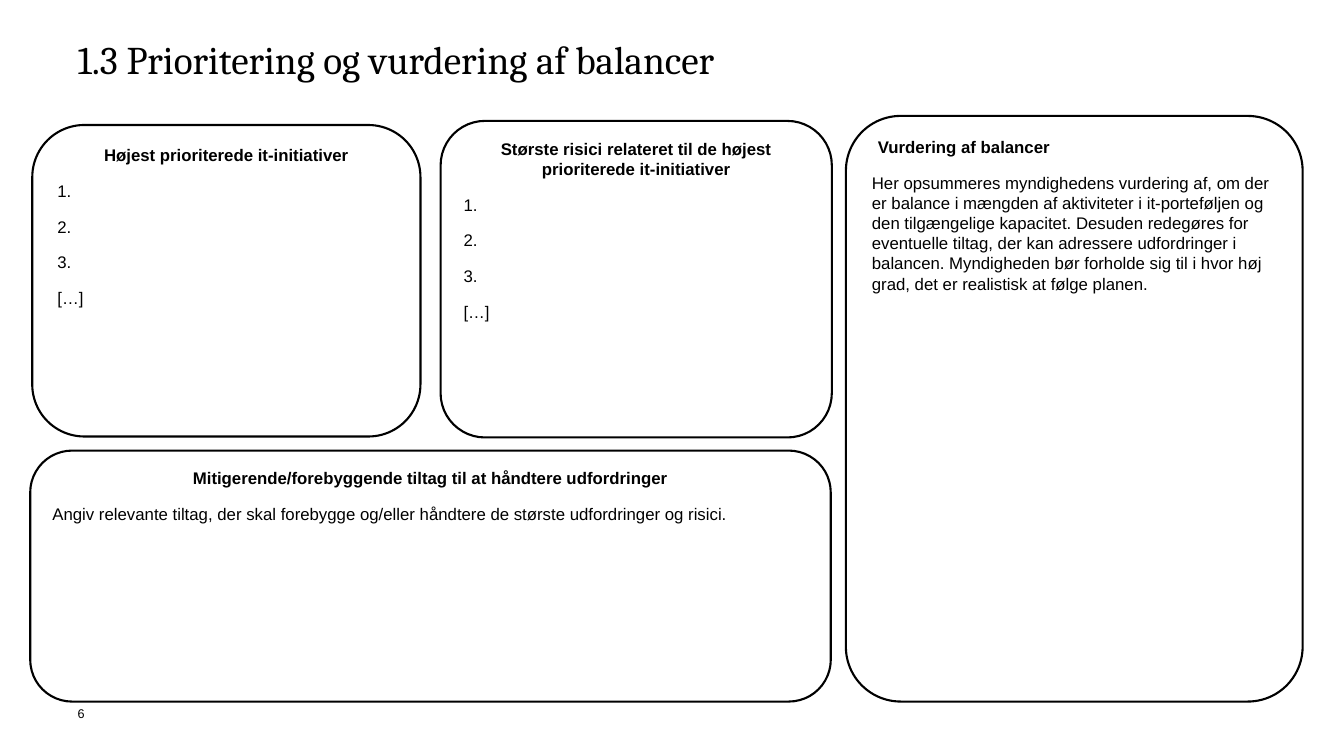
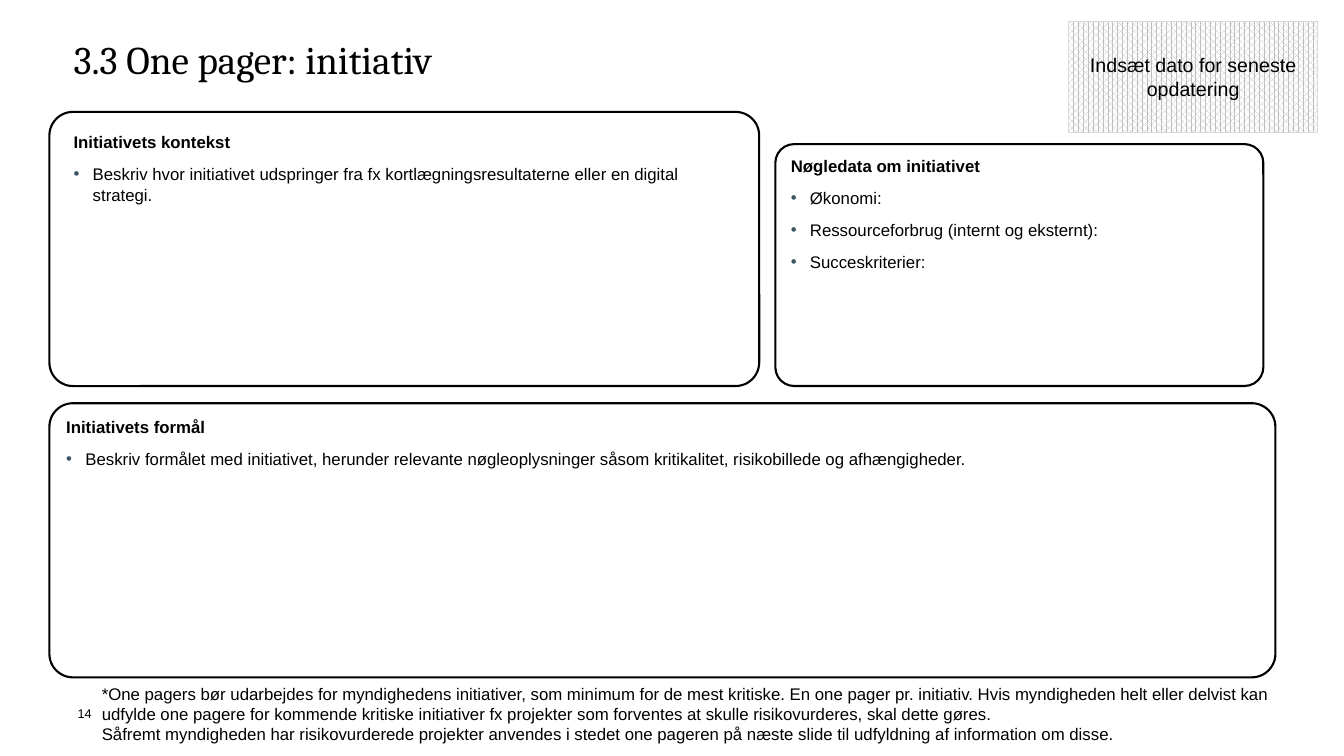
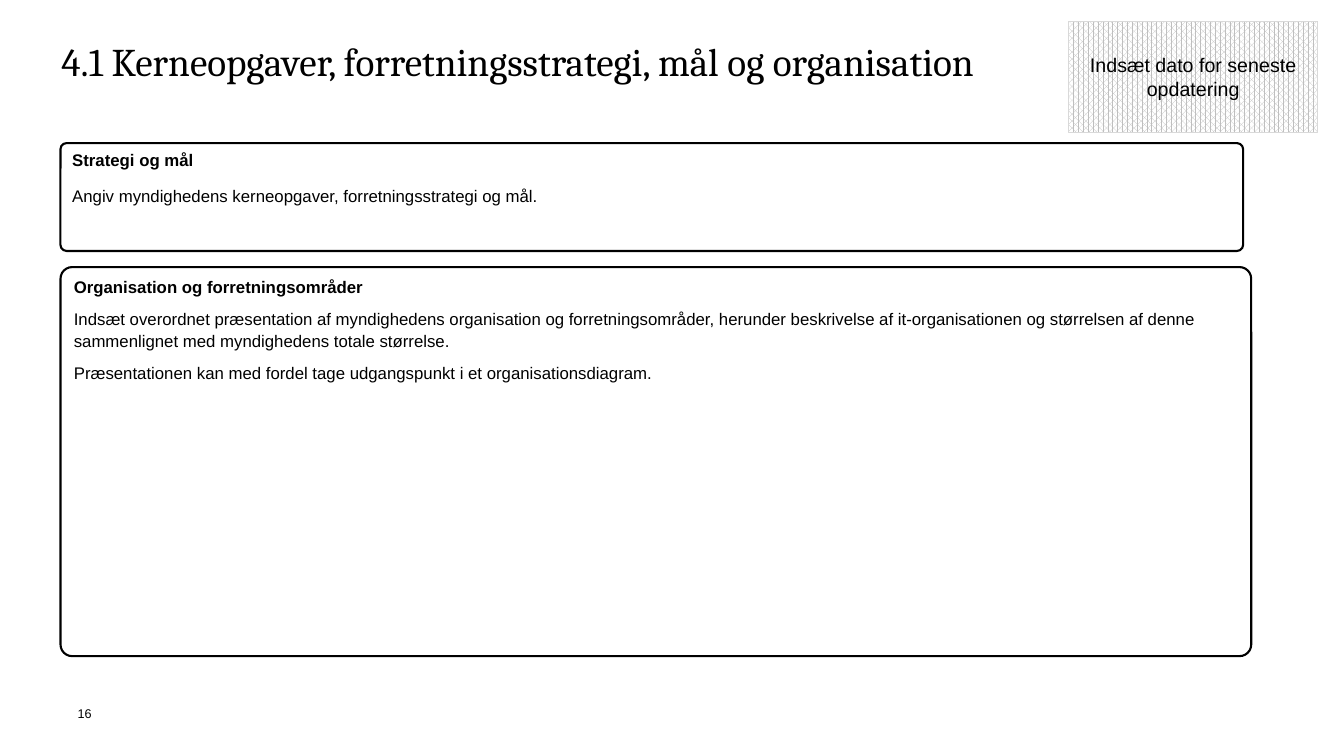
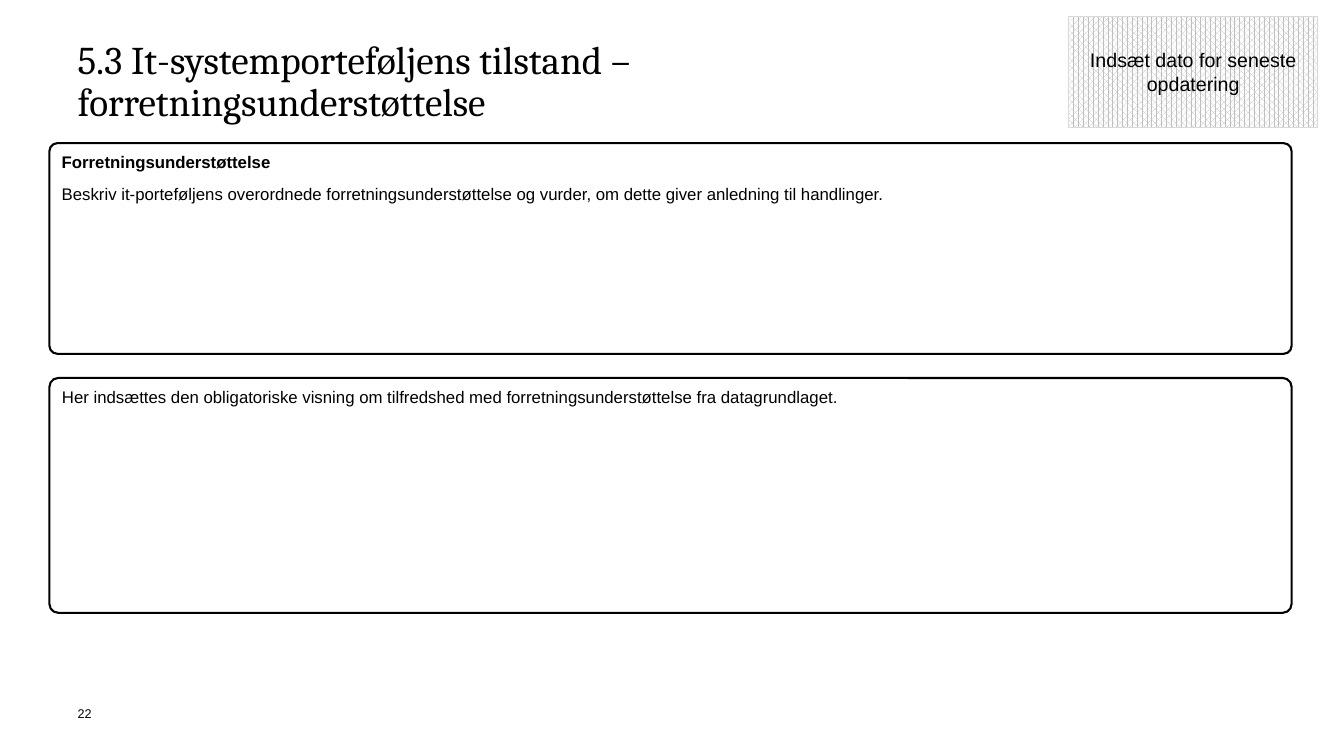
from dataclasses import dataclass

from lxml import etree
from pptx import Presentation
from pptx.dml.color import RGBColor
from pptx.enum.dml import MSO_PATTERN
from pptx.enum.shapes import MSO_SHAPE
from pptx.enum.text import MSO_ANCHOR, MSO_AUTO_SIZE, PP_ALIGN
from pptx.oxml.ns import qn
from pptx.util import Pt

PX = 9144
ROUNDED = MSO_SHAPE.ROUNDED_RECTANGLE
RECTANGLE = MSO_SHAPE.RECTANGLE
TOP, MIDDLE = MSO_ANCHOR.TOP, MSO_ANCHOR.MIDDLE
LEFT, CENTER = PP_ALIGN.LEFT, PP_ALIGN.CENTER
NO_AUTOFIT = MSO_AUTO_SIZE.NONE
HATCH = MSO_PATTERN.PERCENT_70


@dataclass(frozen=True)
class Theme:
    ink: RGBColor = RGBColor.from_string("000000")
    paper: RGBColor = RGBColor.from_string("FFFFFF")
    hatch: RGBColor = RGBColor.from_string("BFBFBF")
    stamp_line: RGBColor = RGBColor.from_string("D9D9D9")
    bullet: str = "3B5463"
    title_font: str = "Cambria"
    body_font: str = "Arial"
    title_size: int = 28
    stamp_size: int = 14
    body_size: int = 12
    number_size: int = 9
    panel_line: float = 1.5
    bullet_indent: int = 19
    heading_indent: int = 6


THEME = Theme()
LOOSE = (1.0, 11)
TIGHT = (1.08, 7.2)
STAMP_TEXT = "Indsæt dato for seneste opdatering"

SLIDES = [
    {
        "number": "6",
        "title": "1.3 Prioritering og vurdering af balancer",
        "title_at": (77, 40, 1180, 102),
        "panels": [
            ((32, 124, 385, 309), 0.167, LOOSE, [
                ("centered heading", "Højest prioriterede it-initiativer"),
                ("body", "1."),
                ("body", "2."),
                ("body", "3."),
                ("body", "[…]"),
            ]),
            ((437, 120, 388, 314), 0.14, LOOSE, [
                ("centered heading", "Største risici relateret til de højest prioriterede it-initiativer"),
                ("body", "1."),
                ("body", "2."),
                ("body", "3."),
                ("body", "[…]"),
            ]),
            ((30, 447, 794, 249), 0.167, LOOSE, [
                ("centered heading", "Mitigerende/forebyggende tiltag til at håndtere udfordringer"),
                ("body", "Angiv relevante tiltag, der skal forebygge og/eller håndtere de største udfordringer og risici."),
            ]),
            ((839, 115, 453, 581), 0.12, LOOSE, [
                ("indented heading", "Vurdering af balancer"),
                ("body", "Her opsummeres myndighedens vurdering af, om der er balance i mængden af aktiviteter i "
                         "it-porteføljen og den tilgængelige kapacitet. Desuden redegøres for eventuelle tiltag, der kan "
                         "adressere udfordringer i balancen. Myndigheden bør forholde sig til i hvor høj grad, det er "
                         "realistisk at følge planen."),
            ]),
        ],
    },
    {
        "number": "14",
        "title": "3.3 One pager: initiativ",
        "title_at": (73, 40, 1180, 102),
        "stamp_top": 21,
        "panels": [
            ((49, 111, 704, 272), 0.086, TIGHT, []),
            ((769, 143, 484, 240), 0.078, TIGHT, [
                ("heading", "Nøgledata om initiativet"),
                ("bullet", "Økonomi:"),
                ("bullet", "Ressourceforbrug (internt og eksternt):"),
                ("bullet", "Succeskriterier:"),
            ]),
            ((49, 400, 1216, 272), 0.086, TIGHT, [
                ("heading", "Initiativets formål"),
                ("bullet", "Beskriv formålet med initiativet, herunder relevante nøgleoplysninger såsom kritikalitet, "
                           "risikobillede og afhængigheder."),
            ]),
            ((101, 678, 1180, 61), None, LOOSE, [
                ("body", "*One pagers bør udarbejdes for myndighedens initiativer, som minimum for de mest kritiske. "
                         "En one pager pr. initiativ. Hvis myndigheden helt eller delvist kan udfylde one pagere for "
                         "kommende kritiske initiativer fx projekter som forventes at skulle risikovurderes, skal dette "
                         "gøres.\nSåfremt myndigheden har risikovurderede projekter anvendes i stedet one pageren på "
                         "næste slide til udfyldning af information om disse."),
            ]),
            ((73, 129, 633, 76), None, TIGHT, [
                ("heading", "Initiativets kontekst"),
                ("bullet", "Beskriv hvor initiativet udspringer fra fx kortlægningsresultaterne eller en digital strategi."),
            ]),
        ],
    },
    {
        "number": "16",
        "title": "4.1 Kerneopgaver, forretningsstrategi, mål og organisation",
        "title_at": (61, 40, 1196, 102),
        "title_spacing": 0.96,
        "stamp_top": 21,
        "panels": [
            ((60, 142, 1173, 107), 0.057, LOOSE, [
                ("heading", "Strategi og mål"),
                ("body", "Angiv myndighedens kerneopgaver, forretningsstrategi og mål."),
            ]),
            ((60, 265, 1181, 386), 0.03, TIGHT, [
                ("heading", "Organisation og forretningsområder"),
                ("body", "Indsæt overordnet præsentation af myndighedens organisation og forretningsområder, herunder "
                         "beskrivelse af it-organisationen og størrelsen af denne sammenlignet med myndighedens totale "
                         "størrelse."),
                ("body", "Præsentationen kan med fordel tage udgangspunkt i et organisationsdiagram."),
            ]),
        ],
    },
    {
        "number": "22",
        "title": "5.3 It-systemporteføljens tilstand –\nforretningsunderstøttelse",
        "title_at": (77, 40, 1180, 102),
        "stamp_top": 16,
        "panels": [
            ((49, 142, 1232, 209), 0.038, TIGHT, [
                ("heading", "Forretningsunderstøttelse"),
                ("body", "Beskriv it-porteføljens overordnede forretningsunderstøttelse og vurder, om dette giver "
                         "anledning til handlinger."),
            ]),
            ((49, 375, 1232, 233), 0.038, TIGHT, [
                ("body", "Her indsættes den obligatoriske visning om tilfredshed med forretningsunderstøttelse fra "
                         "datagrundlaget."),
            ]),
        ],
    },
]


def prepare_frame(shape, anchor=TOP, inset=(0, 0)):
    frame = shape.text_frame
    frame.word_wrap = True
    frame.auto_size = NO_AUTOFIT
    frame.vertical_anchor = anchor
    frame.margin_left = frame.margin_right = inset[0] * PX
    frame.margin_top = frame.margin_bottom = inset[1] * PX
    return frame


def write_paragraphs(frame, items, spacing=LOOSE, size=THEME.body_size, name=THEME.body_font):
    line_spacing, space_before = spacing
    for index, (kind, text) in enumerate(items):
        para = frame.add_paragraph() if index else frame.paragraphs[0]
        para.text = text
        properties = para._p.get_or_add_pPr()
        if kind == "bullet":
            properties.set("marL", str(THEME.bullet_indent * PX))
            properties.set("indent", str(-THEME.bullet_indent * PX))
            bullet_color = etree.SubElement(properties, qn("a:buClr"))
            etree.SubElement(bullet_color, qn("a:srgbClr"), val=THEME.bullet)
            etree.SubElement(properties, qn("a:buFont"), typeface=THEME.body_font)
            etree.SubElement(properties, qn("a:buChar"), char="•")
        elif kind == "indented heading":
            properties.set("marL", str(THEME.heading_indent * PX))
        para.alignment = CENTER if kind.startswith("centered") else LEFT
        para.line_spacing = line_spacing
        para.space_before = Pt(space_before if index else 0)
        para.font.name = name
        para.font.size = Pt(size)
        para.font.bold = kind.endswith("heading")
        para.font.color.rgb = THEME.ink


deck = Presentation()
deck.slide_width = 1333 * PX
deck.slide_height = 750 * PX
title_only = deck.slide_layouts[5]

for content in SLIDES:
    page = deck.slides.add_slide(title_only)

    title = page.shapes.title
    title.left, title.top, title.width, title.height = (value * PX for value in content["title_at"])
    write_paragraphs(prepare_frame(title), [("title", content["title"])],
                     (content.get("title_spacing", 0.9), 0), THEME.title_size, THEME.title_font)

    number = page.shapes.add_textbox(77 * PX, 700 * PX, 31 * PX, 30 * PX)
    write_paragraphs(prepare_frame(number), [("body", content["number"])], size=THEME.number_size)

    for area, corner, spacing, items in content["panels"]:
        bounds = [value * PX for value in area]
        if corner is None:
            frame = prepare_frame(page.shapes.add_textbox(*bounds))
        else:
            panel = page.shapes.add_shape(ROUNDED, *bounds)
            panel.adjustments[0] = corner
            panel.shadow.inherit = False
            panel.fill.background()
            panel.line.color.rgb = THEME.ink
            panel.line.width = Pt(THEME.panel_line)
            frame = prepare_frame(panel, inset=(10, 5))
        write_paragraphs(frame, items, spacing)

    if "stamp_top" in content:
        stamp = page.shapes.add_shape(RECTANGLE, 1060 * PX, content["stamp_top"] * PX, 247 * PX, 110 * PX)
        stamp.shadow.inherit = False
        stamp.fill.patterned()
        stamp.fill.pattern = HATCH
        stamp.fill.fore_color.rgb = THEME.hatch
        stamp.fill.back_color.rgb = THEME.paper
        stamp.line.color.rgb = THEME.stamp_line
        stamp.line.width = Pt(0.5)
        write_paragraphs(prepare_frame(stamp, MIDDLE, (10, 5)), [("centered body", STAMP_TEXT)],
                         size=THEME.stamp_size)

deck.save("out.pptx")
